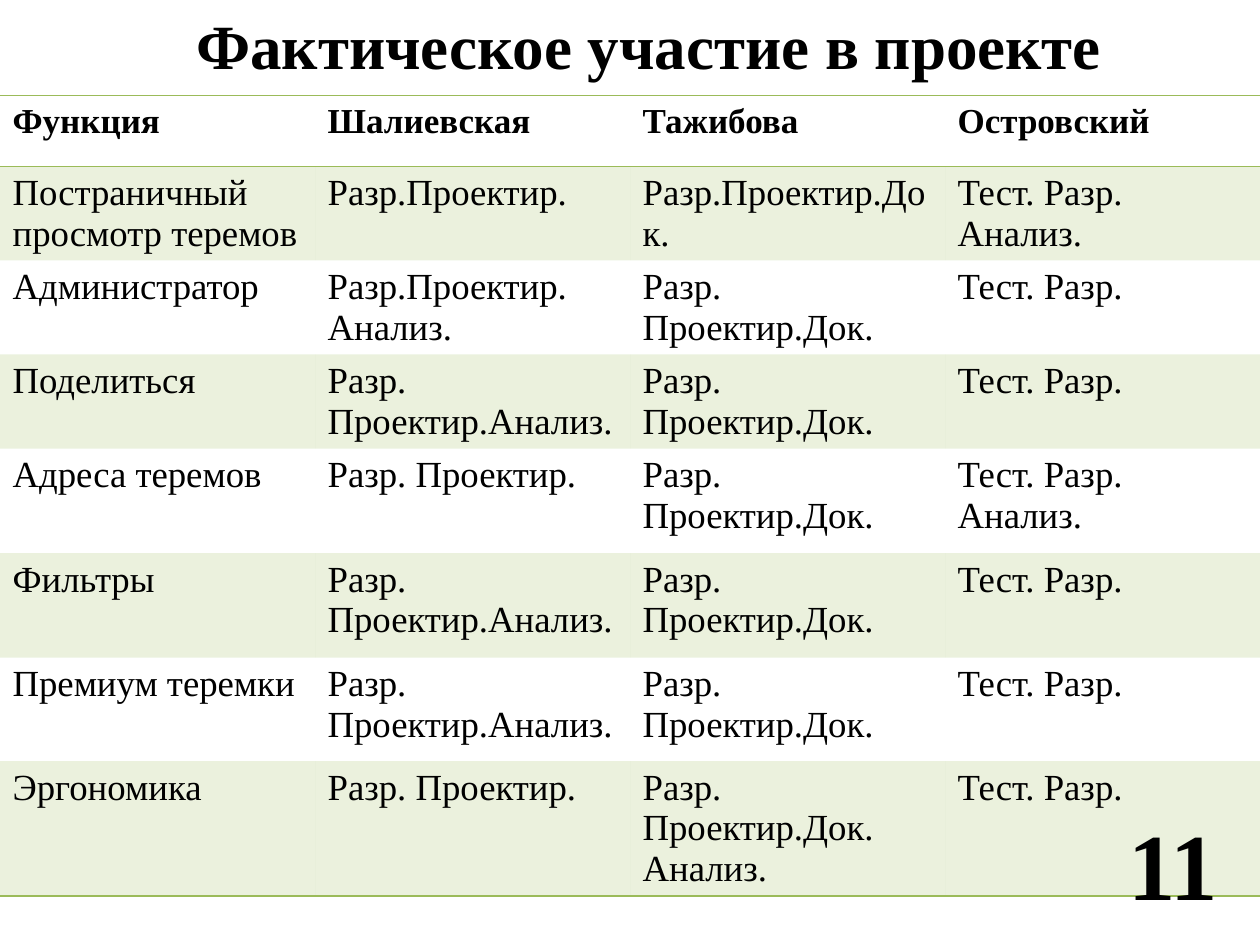
import pptx
import pptx.util
import pptx.dml.color
import pptx.enum.text
import pptx.oxml
import pptx.oxml.ns

TITLE = "Фактическое участие в проекте"
PAGE = "11"
HEAD = ("Функция", "Шалиевская", "Тажибова", "Островский")
DES = "Разр. Проектир."
ANA = "Разр. Проектир.Анализ."
DOC = "Разр. Проектир.Док."
TEST = "Тест. Разр."
TESTANA = "Тест. Разр. Анализ."
ROWS = [
    ("Постраничный просмотр теремов", "Разр.Проектир.", "Разр.Проектир.Док.", TESTANA),
    ("Администратор", "Разр.Проектир.\nАнализ.", DOC, TEST),
    ("Поделиться", ANA, DOC, TEST),
    ("Адреса теремов", DES, DOC, TESTANA),
    ("Фильтры", ANA, DOC, TEST),
    ("Премиум теремки", ANA, DOC, TEST),
    ("Эргономика", DES, "Разр. Проектир.Док. Анализ.", TEST),
]
HEIGHTS = (0.56, 0.7, 0.63, 0.72, 0.83, 0.83, 0.82, 0.82)
COLORS = {"text": "000000", "green": "9BBB59"}
FONT = "Times New Roman"
PLAIN = "{2D5ABB26-0587-4C30-8999-92F81FD0307C}"  # table style without grid
WIDE, HIGH = 10, 7.5
inch = pptx.util.Inches


def rgb(name):
    return pptx.dml.color.RGBColor.from_string(COLORS[name])


def write(frame, text, size, bold=False, align=None):
    frame.text = text
    frame.word_wrap = True
    for para in frame.paragraphs:
        if align is not None:
            para.alignment = align
        for run in para.runs:
            font = run.font
            font.name, font.size, font.bold = FONT, pptx.util.Pt(size), bold
            font.color.rgb = rgb("text")


def place(shape, left, top, width, height):
    shape.left, shape.top = inch(left), inch(top)
    shape.width, shape.height = inch(width), inch(height)


def tint(cell, share):
    """Fill the cell with green at the given opacity in percent."""
    cell.fill.solid()
    cell.fill.fore_color.rgb = rgb("green")
    color = cell.fill._xPr.find(".//" + pptx.oxml.ns.qn("a:srgbClr"))
    color.append(pptx.oxml.parse_xml(
        f'<a:alpha {pptx.oxml.ns.nsdecls("a")} val="{share * 1000}"/>'))


def rule(cell, sides):
    """Draw 1 pt lines on the given sides, T before B."""
    props = cell._tc.get_or_add_tcPr()
    for spot, side in enumerate(sides):
        props.insert(spot, pptx.oxml.parse_xml(
            f'<a:ln{side} {pptx.oxml.ns.nsdecls("a")} w="12700"><a:solidFill>'
            f'<a:srgbClr val="{COLORS["green"]}"/></a:solidFill></a:ln{side}>'))


def grid(slide):
    data = [HEAD] + ROWS
    last = len(data) - 1
    frame = slide.shapes.add_table(
        len(data), len(HEAD), 0, inch(0.76), inch(WIDE), inch(6.59))
    table = frame.table
    table.horz_banding = False
    style = table._tbl.tblPr.find(pptx.oxml.ns.qn("a:tableStyleId"))
    style.text = PLAIN
    for r, texts in enumerate(data):
        table.rows[r].height = inch(HEIGHTS[r])
        for c, text in enumerate(texts):
            cell = table.cell(r, c)
            write(cell.text_frame, text, 21 if r else 20, bold=r == 0)
            if r % 2:
                tint(cell, 20)
            else:
                cell.fill.background()
            rule(cell, {0: "TB", last: "B"}.get(r, ""))
    frame.height = inch(6.59)


def main():
    deck = pptx.Presentation()
    deck.slide_width, deck.slide_height = inch(WIDE), inch(HIGH)
    slide = deck.slides.add_slide(deck.slide_layouts[5])
    grid(slide)

    title = slide.shapes.title
    place(title, 0.3, -0.27, 9.7, 1.25)
    write(title.text_frame, TITLE, 36, bold=True,
          align=pptx.enum.text.PP_ALIGN.CENTER)
    title.text_frame.auto_size = pptx.enum.text.MSO_AUTO_SIZE.NONE
    title.text_frame.vertical_anchor = pptx.enum.text.MSO_ANCHOR.MIDDLE

    page = slide.shapes.add_textbox(0, 0, 0, 0)
    place(page, 8.86, 6.35, 0.96, 1.01)
    write(page.text_frame, PAGE, 54, bold=True)
    page.text_frame.auto_size = pptx.enum.text.MSO_AUTO_SIZE.SHAPE_TO_FIT_TEXT
    deck.save("out.pptx")


if __name__ == "__main__":
    main()
